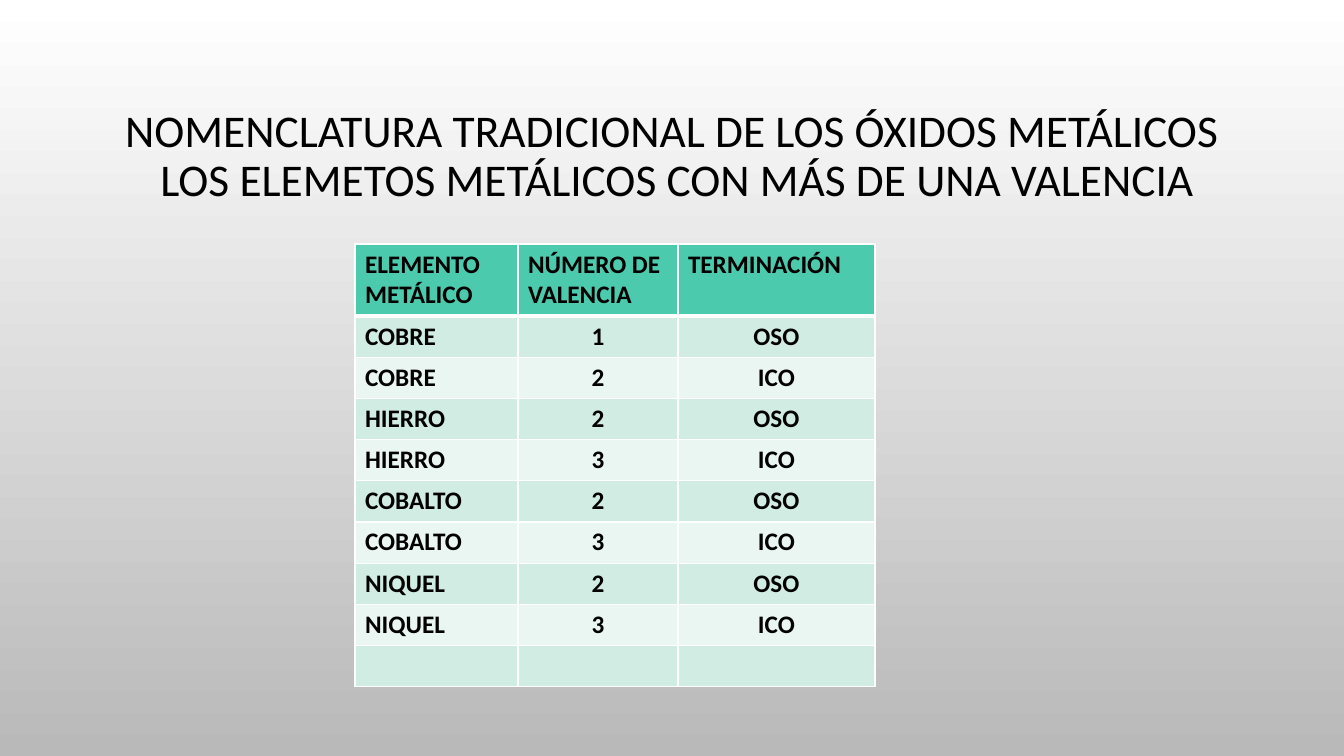
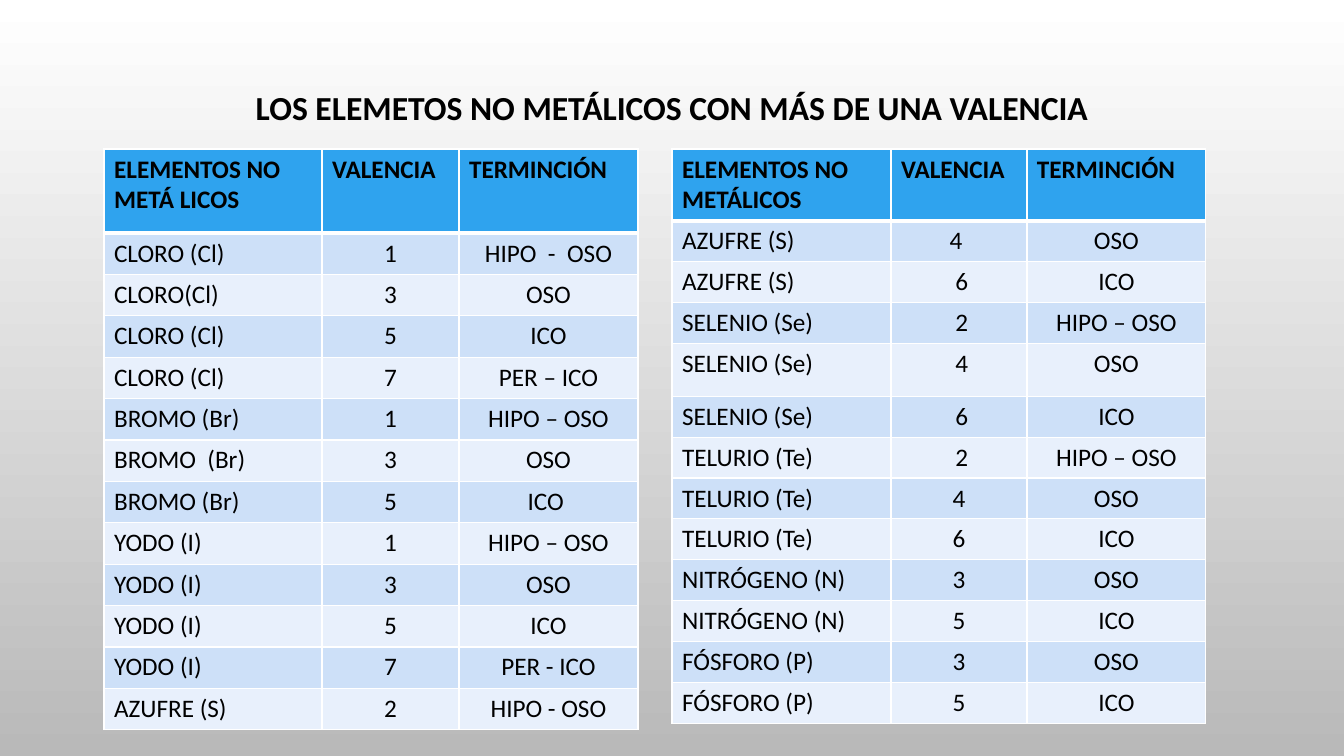
from dataclasses import dataclass

from lxml import etree
from pptx import Presentation
from pptx import util as u
from pptx.dml.color import RGBColor
from pptx.enum import text
from pptx.oxml import ns

PX = 914400 / 100.8


@dataclass(frozen=True)
class Theme:
    font: str = "Calibri"
    ink: str = "000000"
    line: str = "FFFFFF"
    background: tuple = ("FFFFFF", "B9B9B9")
    green: tuple = ("4BCAAD", "D0ECE3", "E9F6F1")  # header, odd rows, even rows
    blue: tuple = ("2FA3EE", "CDE0F8", "E8F0FC")
    cell_size: int = 18


theme = Theme()


def px(n):
    return u.Emu(round(n * PX))


def set_font(p, size, bold):
    p.font.name = theme.font
    p.font.size = u.Pt(size)
    p.font.bold = bold
    p.font.color.rgb = RGBColor.from_string(theme.ink)


METALS = [
    ("ELEMENTO METÁLICO", "NÚMERO DE VALENCIA", "TERMINACIÓN"),
    ("COBRE", "1", "OSO"),
    ("COBRE", "2", "ICO"),
    ("HIERRO", "2", "OSO"),
    ("HIERRO", "3", "ICO"),
    ("COBALTO", "2", "OSO"),
    ("COBALTO", "3", "ICO"),
    ("NIQUEL", "2", "OSO"),
    ("NIQUEL", "3", "ICO"),
    ("", "", ""),
]
HALOGENS = [
    ("ELEMENTOS NO METÁ LICOS", "VALENCIA", "TERMINCIÓN"),
    ("CLORO (Cl)", "1", "HIPO  -  OSO"),
    ("CLORO(Cl)", "3", "OSO"),
    ("CLORO (Cl)", "5", "ICO"),
    ("CLORO (Cl)", "7", "PER – ICO"),
    ("BROMO (Br)", "1", "HIPO – OSO"),
    ("BROMO  (Br)", "3", "OSO"),
    ("BROMO (Br)", "5", "ICO "),
    ("YODO (I)", "1", "HIPO – OSO"),
    ("YODO (I)", "3", "OSO"),
    ("YODO (I)", "5", "ICO"),
    ("YODO (I)", "7", "PER - ICO"),
    ("AZUFRE (S)", "2", "HIPO - OSO"),
]
OTHER_NONMETALS = [
    ("ELEMENTOS NO METÁLICOS", "VALENCIA", "TERMINCIÓN"),
    ("AZUFRE (S)", "4 ", "OSO"),
    ("AZUFRE (S)", " 6", "ICO"),
    ("SELENIO (Se)", " 2", "HIPO – OSO"),
    ("SELENIO (Se)", " 4", "OSO"),
    ("SELENIO (Se)", " 6", "ICO"),
    ("TELURIO (Te)", " 2", "HIPO – OSO"),
    ("TELURIO (Te)", "4", "OSO"),
    ("TELURIO (Te)", "6", "ICO"),
    ("NITRÓGENO (N)", "3", "OSO"),
    ("NITRÓGENO (N)", "5", "ICO"),
    ("FÓSFORO (P)", "3", "OSO"),
    ("FÓSFORO (P)", "5", "ICO"),
]

# Title, its height, size and weight; then the tables:
# rows, left, top, height, column widths, heights of special rows, fills, bold body
SLIDES = [
    ("NOMENCLATURA TRADICIONAL DE LOS ÓXIDOS METÁLICOS\v"
     " LOS ELEMETOS METÁLICOS CON MÁS DE UNA VALENCIA", 176, 32.4, False, [
         (METALS, 355, 244, 443, (163, 160, 197), {0: 72}, theme.green, True),
     ]),
    ("LOS ELEMETOS NO METÁLICOS CON MÁS DE UNA VALENCIA", 81, 24, True, [
        (HALOGENS, 104, 149, 581, (218, 137, 179), {0: 84}, theme.blue, False),
        (OTHER_NONMETALS, 672, 149, 574, (219, 136, 179), {0: 71, 4: 53},
         theme.blue, False),
    ]),
]

prs = Presentation()
prs.slide_width, prs.slide_height = px(1344), px(756)

fill = prs.slide_master.background.fill
fill.gradient()
fill.gradient_angle = 270
for stop, position, color in zip(fill.gradient_stops, (0, 1), theme.background):
    stop.position = position
    stop.color.rgb = RGBColor.from_string(color)

for title, title_height, title_size, title_bold, tables in SLIDES:
    s = prs.slides.add_slide(prs.slide_layouts.get_by_name("Title Only"))
    sp = s.shapes.title
    sp.left, sp.top, sp.width, sp.height = px(101), px(69), px(1142), px(title_height)
    tf = sp.text_frame
    tf.text = title
    tf.word_wrap = True
    tf.auto_size = text.MSO_AUTO_SIZE.NONE
    tf.vertical_anchor = text.MSO_ANCHOR.MIDDLE
    p = tf.paragraphs[0]
    p.alignment = text.PP_ALIGN.CENTER
    p.line_spacing = 0.9
    set_font(p, title_size, title_bold)

    for rows, left, top, height, widths, special, fills, bold in tables:
        table = s.shapes.add_table(len(rows), len(widths), px(left), px(top),
                                   px(sum(widths)), px(height)).table
        row_height = (height - sum(special.values())) / (len(rows) - len(special))
        for column, width in zip(table.columns, widths):
            column.width = px(width)
        for i, values in enumerate(rows):
            table.rows[i].height = px(special.get(i, row_height))
            color = fills[0] if i == 0 else fills[1 if i % 2 else 2]
            for j, value in enumerate(values):
                cell = table.cell(i, j)
                cell.text = value
                p = cell.text_frame.paragraphs[0]
                if i and j:
                    p.alignment = text.PP_ALIGN.CENTER
                set_font(p, theme.cell_size, bold or i == 0)
                tc_pr = cell._tc.get_or_add_tcPr()
                for side in "LRTB":
                    thick = (i, side) in ((0, "B"), (1, "T"))
                    ln = etree.SubElement(tc_pr, ns.qn(f"a:ln{side}"),
                                          w=str(u.Pt(3 if thick else 1)))
                    solid = etree.SubElement(ln, ns.qn("a:solidFill"))
                    etree.SubElement(solid, ns.qn("a:srgbClr"), val=theme.line)
                cell.fill.solid()
                cell.fill.fore_color.rgb = RGBColor.from_string(color)

prs.save("out.pptx")
